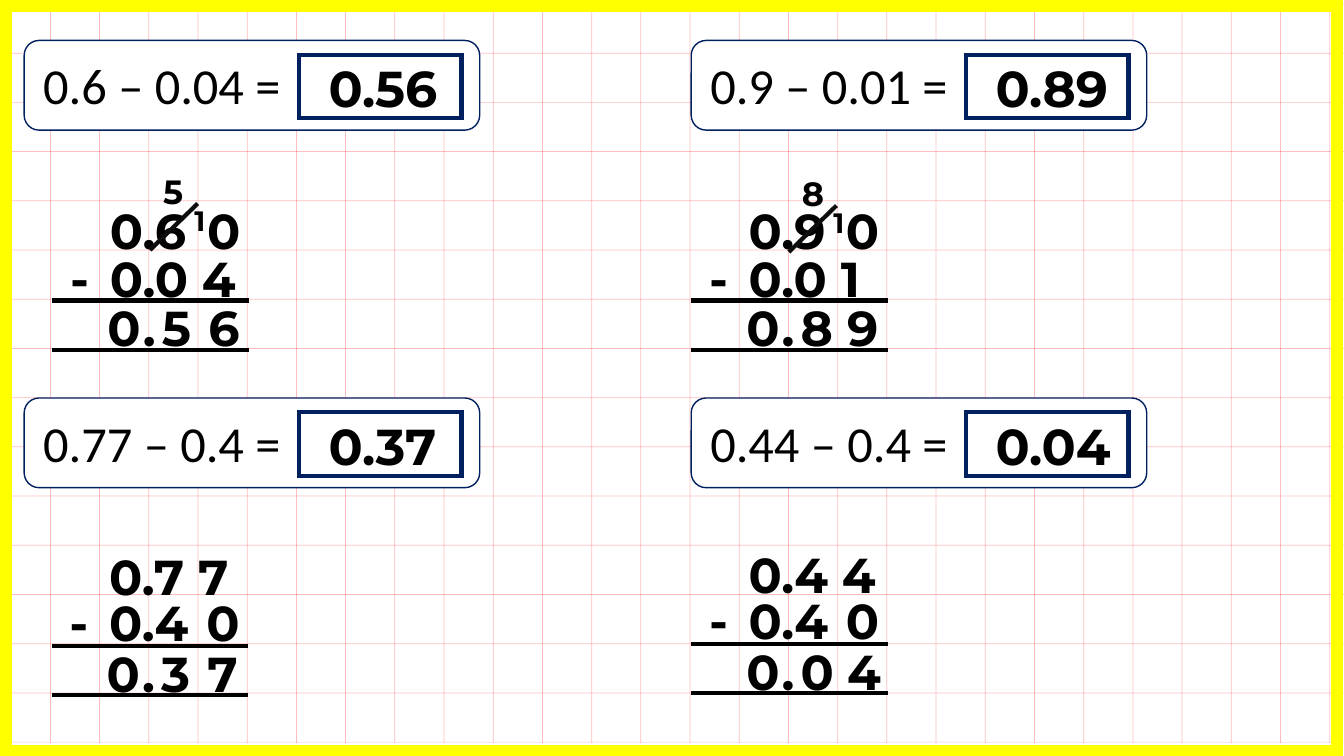
"""Build a slide of four decimal subtractions worked out on squared paper."""
from dataclasses import dataclass

from lxml.etree import SubElement
from pptx import Presentation
from pptx.dml.color import RGBColor
from pptx.enum.shapes import MSO_CONNECTOR, MSO_SHAPE
from pptx.enum.text import MSO_AUTO_SIZE
from pptx.oxml.ns import qn
from pptx.util import Cm, Pt

STRAIGHT = MSO_CONNECTOR.STRAIGHT
RECTANGLE = MSO_SHAPE.RECTANGLE
ROUNDED = MSO_SHAPE.ROUNDED_RECTANGLE
GROW = MSO_AUTO_SIZE.SHAPE_TO_FIT_TEXT


@dataclass(frozen=True)
class Theme:
    """Colours, fonts and sizes of the slide."""
    ink: str = "000000"
    strike: str = "0D0D0D"
    navy: str = "002060"
    paper: str = "FFFFFF"
    grid: str = "FF0000"
    frame: str = "FFFF00"
    question_font: str = "Calibri"
    digit_font: str = "Montserrat"
    card_size: float = 36
    digit_size: float = 35
    exchange_size: float = 24
    carry_size: float = 20


@dataclass(frozen=True)
class Exchange:
    """A ten exchanged from the tenths, with its vertical shift."""
    digit: str
    shift: float


@dataclass(frozen=True)
class Subtraction:
    """One question with its written working."""
    question: str
    answer: str
    card: tuple
    working: tuple
    minuend: tuple
    subtrahend: tuple
    subtrahend_rise: float
    exchange: Exchange = None


THEME = Theme()
LEFT, RIGHT = 0.61, 17.42
TOP, BOTTOM = 1.02, 10.03
GRID_PITCH = 1.24
DIGIT_BOX = (1.45, 1.75)
NUMBER_BOX = (5.11, 1.75)

SUBTRACTIONS = (
    Subtraction("0.6 – 0.04 =", "0.56", (LEFT, TOP), (1.32, 7.57),
                ("0.6", "0"), ("0.0 4",), 1.42, Exchange("5", 0)),
    Subtraction("0.9 – 0.01 =", "0.89", (RIGHT, TOP), (RIGHT, 7.57),
                ("0.9", "0"), ("0.0 1",), 1.42, Exchange("8", 0.05)),
    Subtraction("0.77 – 0.4 =", "0.37", (LEFT, BOTTOM), (1.3, 16.28),
                ("0.7 7",), ("0.4", "0"), 1.47),
    Subtraction("0.44 – 0.4 =", "0.04", (RIGHT, BOTTOM), (RIGHT, 16.23),
                ("0.4 4",), ("0.4", "0"), 1.47),
)


def add_line(slide, start, end, color, width, opacity=100):
    """Draw a straight line between two points."""
    line = slide.shapes.add_connector(STRAIGHT, *map(Cm, (*start, *end)))
    line.line.color.rgb = RGBColor.from_string(color)
    line.line.width = Pt(width)
    properties = line._element.spPr
    if opacity < 100:
        paint = next(properties.iter(qn("a:srgbClr")))
        SubElement(paint, qn("a:alpha"), val=str(opacity * 1000))
    SubElement(properties, qn("a:effectLst"))


def add_box(slide, kind, left, top, width, height, color, weight, fill=None):
    """Draw an outlined shape with sharp line joins."""
    box = slide.shapes.add_shape(kind, *map(Cm, (left, top, width, height)))
    box.shadow.inherit = False
    if fill:
        box.fill.solid()
        box.fill.fore_color.rgb = RGBColor.from_string(fill)
    else:
        box.fill.background()
    box.line.color.rgb = RGBColor.from_string(color)
    box.line.width = Pt(weight)
    outline = box._element.spPr.find(qn("a:ln"))
    SubElement(outline, qn("a:miter"), lim="800000")


def add_text(slide, text, left, top, size, points=THEME.digit_size,
             font=THEME.digit_font, bold=True, wrap=True):
    """Place one line of text."""
    box = slide.shapes.add_textbox(*map(Cm, (left, top, *size)))
    frame = box.text_frame
    frame.word_wrap = wrap
    frame.auto_size = GROW
    run = frame.paragraphs[0].add_run()
    run.text = text
    styles = {"name": font, "size": Pt(points), "bold": bold}
    for attribute, value in styles.items():
        setattr(run.font, attribute, value)
    run.font.color.rgb = RGBColor.from_string(THEME.ink)


def add_squared_paper(slide):
    """Rule the squares and frame the page."""
    for column in range(27):
        x = 1.27 + column * GRID_PITCH
        add_line(slide, (x, 0), (x, 18.72), THEME.grid, 0.5, 25)
    for row in range(16):
        y = 0.1 + row * GRID_PITCH
        add_line(slide, (0, y), (33.87, y), THEME.grid, 0.5, 25)
    add_box(slide, RECTANGLE, 0.15, 0.15, 33.55, 18.77, THEME.frame, 8.25)


def add_question_card(slide, item):
    """Add the question and its boxed answer."""
    x, y = item.card
    add_box(slide, ROUNDED, x, y, 11.48, 2.26, THEME.navy, 1, THEME.paper)
    add_text(slide, item.question, x + 0.23, y + 0.23, (6.83, 1.8),
             THEME.card_size, THEME.question_font, False, False)
    add_box(slide, RECTANGLE, x + 6.93, y + 0.36, 4.09, 1.6, THEME.navy, 3)
    add_text(slide, item.answer, x + 7.42, y + 0.3, (4.83, 1.8),
             THEME.card_size)


def add_number(slide, pieces, left, top):
    """Write a number, with any separate last digit in its column."""
    number, *last_digit = pieces
    add_text(slide, number, left + 1.2, top, NUMBER_BOX)
    for digit in last_digit:
        add_text(slide, digit, left + 3.65, top, DIGIT_BOX)


def add_exchange(slide, exchange, x, y):
    """Strike the tenths and write the exchanged digits."""
    y += exchange.shift
    add_line(slide, (x + 2.46, y - 1.27), (x + 3.66, y - 2.44),
             THEME.strike, 3)
    add_text(slide, exchange.digit, x + 2.54, y - 3.38, (0.91, 1.27),
             THEME.exchange_size)
    add_text(slide, "1", x + 3.33, y - 2.57, (0.89, 1.12), THEME.carry_size)


def add_working(slide, item):
    """Set out the column subtraction around its upper rule."""
    x, y = item.working
    subtrahend_top = y - item.subtrahend_rise
    add_number(slide, item.minuend, x, y - 2.64)
    add_number(slide, item.subtrahend, x, subtrahend_top)
    add_text(slide, "-", x + 0.2, subtrahend_top, DIGIT_BOX)
    for rule in (y, y + GRID_PITCH):
        add_line(slide, (x, rule), (x + 4.95, rule), THEME.ink, 3)
    for symbol, column in zip(item.answer, (1.14, 2.03, 2.51, 3.68)):
        add_text(slide, symbol, x + column, y - 0.2, DIGIT_BOX)
    if item.exchange:
        add_exchange(slide, item.exchange, x, y)


def main():
    """Build and save the slide."""
    deck = Presentation()
    deck.slide_width, deck.slide_height = Cm(33.87), Cm(19.05)
    slide = deck.slides.add_slide(deck.slide_layouts[6])
    add_squared_paper(slide)
    for item in SUBTRACTIONS:
        add_question_card(slide, item)
        add_working(slide, item)
    deck.save("out.pptx")


if __name__ == "__main__":
    main()
